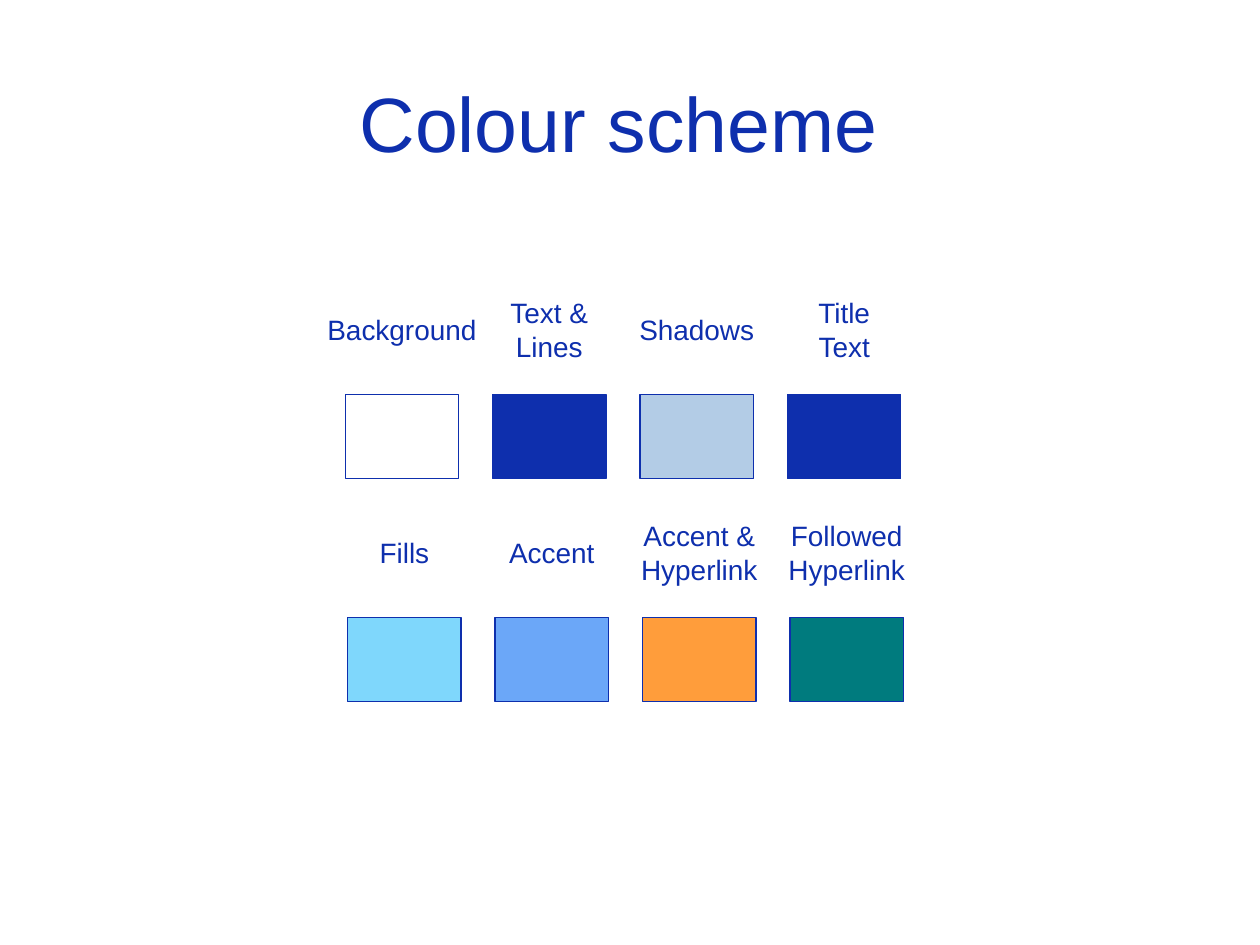
from pptx import Presentation
from pptx.dml.color import RGBColor
from pptx.enum.shapes import MSO_SHAPE
from pptx.enum.text import MSO_ANCHOR, MSO_AUTO_SIZE, PP_ALIGN
from pptx.util import Inches, Pt

RECTANGLE = MSO_SHAPE.RECTANGLE
MIDDLE = MSO_ANCHOR.MIDDLE
FIT_SHAPE = MSO_AUTO_SIZE.SHAPE_TO_FIT_TEXT
CENTER = PP_ALIGN.CENTER

TITLE_ONLY_LAYOUT = 5
FONT_NAME = "Arial"
BLUE = "0E2FAD"
WHITE = "FFFFFF"

SWATCH_WIDTH = 0.9
SWATCH_HEIGHT = 0.67
COLUMN_PITCH = 1.17
LINE_HEIGHT = 0.27
LABEL_PADDING = 0.1

SWATCH_ROWS = [
    (2.74, 3.13, [
        ("Background", 1.41, WHITE),
        ("Text &\nLines", 0.86, BLUE),
        ("Shadows", 1.13, "B3CCE6"),
        ("Title\vText", 0.65, BLUE),
    ]),
    (2.76, 4.9, [
        ("Fills", 0.62, "7FD7FC"),
        ("Accent", 0.9, "6BA7F8"),
        ("Accent &\nHyperlink", 1.15, "FF9D3B"),
        ("Followed\nHyperlink", 1.15, "007B7E"),
    ]),
]


def color(hex_string):
    return RGBColor.from_string(hex_string)


def write_text(shape, text, size):
    text_frame = shape.text_frame
    text_frame.text = text
    for paragraph in text_frame.paragraphs:
        paragraph.alignment = CENTER
        for run in paragraph.runs:
            run.font.name = FONT_NAME
            run.font.size = Pt(size)
            run.font.color.rgb = color(BLUE)


def set_title(slide, text):
    title = slide.shapes.title
    title.left, title.top = Inches(0.41), Inches(0.34)
    title.width, title.height = Inches(9), Inches(1.25)
    write_text(title, text, 44)
    title.text_frame.vertical_anchor = MIDDLE


def add_swatch(slide, left, top, fill):
    swatch = slide.shapes.add_shape(
        RECTANGLE, Inches(left), Inches(top), Inches(SWATCH_WIDTH), Inches(SWATCH_HEIGHT)
    )
    swatch.shadow.inherit = False
    swatch.fill.solid()
    swatch.fill.fore_color.rgb = color(fill)
    swatch.line.color.rgb = color(BLUE)
    swatch.line.width = Pt(0.75)


def add_label(slide, center, middle, width, text):
    height = LABEL_PADDING + LINE_HEIGHT * len(text.splitlines())
    label = slide.shapes.add_textbox(
        Inches(center - width / 2), Inches(middle - height / 2), Inches(width), Inches(height)
    )
    write_text(label, text, 16)
    label.text_frame.word_wrap = False
    label.text_frame.auto_size = FIT_SHAPE


def add_swatch_row(slide, left, top, entries):
    for column, (text, label_width, fill) in enumerate(entries):
        swatch_left = left + column * COLUMN_PITCH
        add_swatch(slide, swatch_left, top, fill)
        add_label(slide, swatch_left + SWATCH_WIDTH / 2, top - 0.51, label_width, text)


def main():
    presentation = Presentation()
    presentation.slide_width = Inches(10)
    presentation.slide_height = Inches(7.5)
    slide = presentation.slides.add_slide(presentation.slide_layouts[TITLE_ONLY_LAYOUT])
    slide.background.fill.solid()
    slide.background.fill.fore_color.rgb = color(WHITE)
    set_title(slide, "Colour scheme")
    for left, top, entries in SWATCH_ROWS:
        add_swatch_row(slide, left, top, entries)
    presentation.save("out.pptx")


if __name__ == "__main__":
    main()
